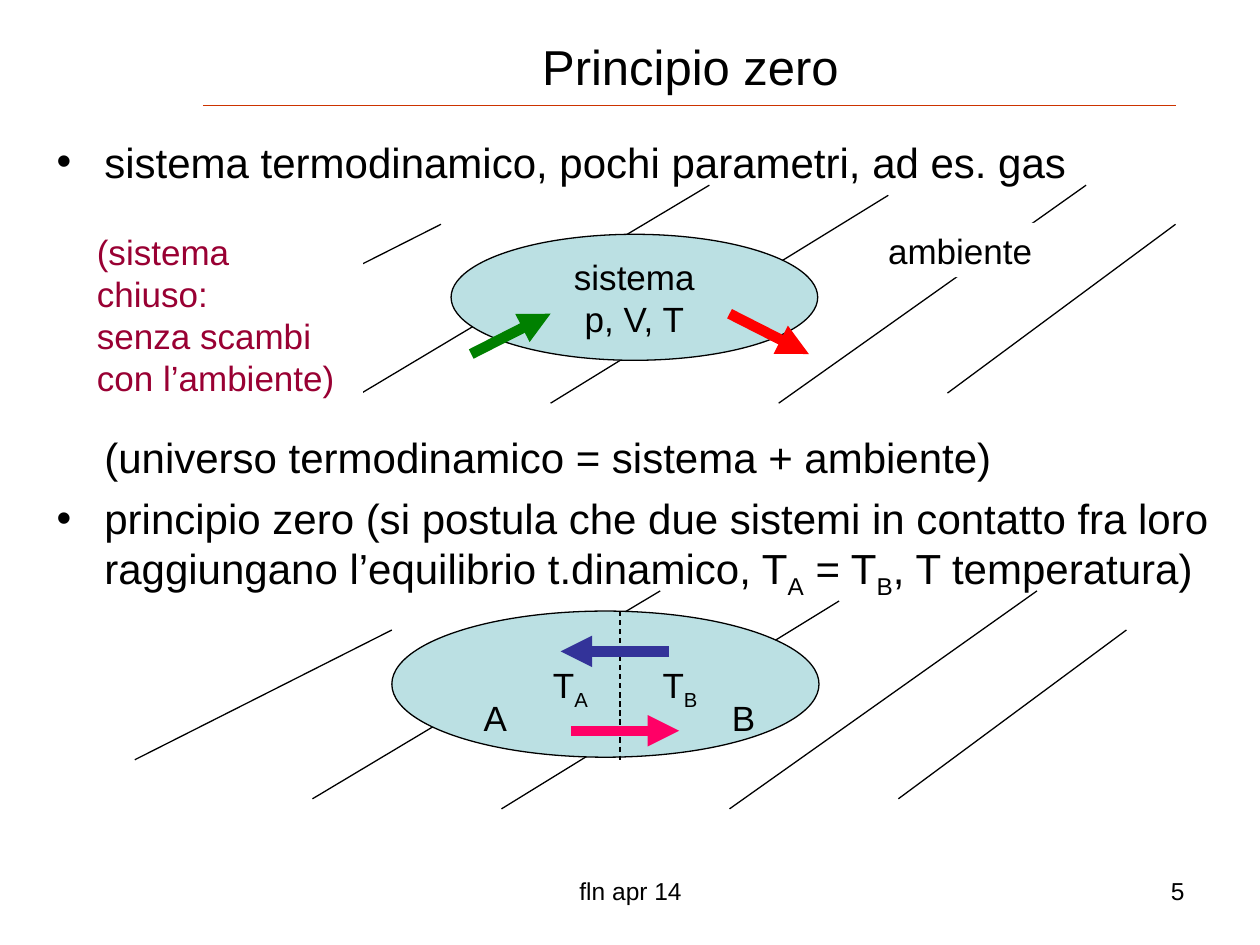
import pptx
import pptx.util
import pptx.dml.color
import pptx.enum.dml
import pptx.enum.shapes
import pptx.enum.text
import pptx.oxml.ns
import lxml.etree

Inches = pptx.util.Inches
Pt = pptx.util.Pt
RGBColor = pptx.dml.color.RGBColor
PP_ALIGN = pptx.enum.text.PP_ALIGN
MSO_ANCHOR = pptx.enum.text.MSO_ANCHOR
MSO_SHAPE = pptx.enum.shapes.MSO_SHAPE
qn = pptx.oxml.ns.qn

BLACK = RGBColor(0x00, 0x00, 0x00)
WHITE = RGBColor(0xFF, 0xFF, 0xFF)
RULE = RGBColor(0xCC, 0x33, 0x00)
POOL = RGBColor(0xBB, 0xE0, 0xE3)
GREEN = RGBColor(0x00, 0x80, 0x00)
RED = RGBColor(0xFF, 0x00, 0x00)
PINK = RGBColor(0xFF, 0x00, 0x66)
BLUE = RGBColor(0x33, 0x33, 0x99)
MAROON = RGBColor(0x99, 0x00, 0x33)

HATCH = [
    (1.46, 2.81, 3.5, 1.78),
    (2.87, 3.12, 5.63, 1.47),
    (4.37, 3.2, 7.05, 1.55),
    (6.18, 3.2, 8.62, 1.47),
    (7.52, 3.12, 9.33, 1.78),
]


class SlideBuilder:
    font = "Arial"

    def __init__(self, slide):
        self.slide = slide

    def style(self, p, size, color, align=PP_ALIGN.LEFT):
        p.alignment = align
        for r in p.runs:
            r.font.name = self.font
            r.font.size = Pt(size)
            r.font.color.rgb = color

    def label(self, sp, text, size=20, color=BLACK, align=PP_ALIGN.LEFT,
              anchor=MSO_ANCHOR.TOP, wrap=True, subscript=""):
        tf = sp.text_frame
        tf.word_wrap = wrap
        tf.vertical_anchor = anchor
        tf.text = text
        if subscript:
            self.add_subscript(tf.paragraphs[0], subscript)
        for p in tf.paragraphs:
            self.style(p, size, color, align)

    def add_subscript(self, p, text):
        r = p.add_run()
        r.text = text
        r._r.get_or_add_rPr().set("baseline", "-25000")

    def text(self, x, y, w, h, text, **options):
        sp = self.slide.shapes.add_textbox(Inches(x), Inches(y), Inches(w), Inches(h))
        self.label(sp, text, **options)

    def shape(self, kind, x, y, w, h, fill, outlined=False):
        sp = self.slide.shapes.add_shape(kind, Inches(x), Inches(y), Inches(w), Inches(h))
        sp.shadow.inherit = False
        sp.fill.solid()
        sp.fill.fore_color.rgb = fill
        if outlined:
            sp.line.color.rgb = BLACK
            sp.line.width = Pt(0.75)
        else:
            sp.line.fill.background()
        return sp

    def line(self, x1, y1, x2, y2, color=BLACK, width=0.75):
        cx = self.slide.shapes.add_connector(
            pptx.enum.shapes.MSO_CONNECTOR.STRAIGHT,
            Inches(x1), Inches(y1), Inches(x2), Inches(y2))
        cx.line.color.rgb = color
        cx.line.width = Pt(width)
        lxml.etree.SubElement(cx._element.spPr, qn("a:effectLst"))
        return cx

    def arrow(self, x1, y1, x2, y2, color):
        cx = self.line(x1, y1, x2, y2, color, 6)
        ln = cx._element.spPr.find(qn("a:ln"))
        lxml.etree.SubElement(ln, qn("a:tailEnd"), type="triangle")

    def hatch(self, dx=0, dy=0):
        for x1, y1, x2, y2 in HATCH:
            self.line(x1 + dx, y1 + dy, x2 + dx, y2 + dy)

    def body(self, x, y, w, h, paragraphs):
        sp = self.slide.shapes.add_textbox(Inches(x), Inches(y), Inches(w), Inches(h))
        tf = sp.text_frame
        tf.word_wrap = True
        tf.margin_top = Inches(0.09)
        for i, (bullet, before, parts) in enumerate(paragraphs):
            p = tf.paragraphs[0] if i == 0 else tf.add_paragraph()
            pPr = p._p.get_or_add_pPr()
            pPr.set("marL", str(Inches(0.38)))
            pPr.set("indent", str(Inches(-0.38 if bullet else 0)))
            if bullet:
                lxml.etree.SubElement(pPr, qn("a:buFont"), typeface=self.font)
                lxml.etree.SubElement(pPr, qn("a:buChar"), char="•")
            p.space_before = Pt(before)
            for j, part in enumerate(parts):
                if j % 2:
                    self.add_subscript(p, part)
                else:
                    p.add_run().text = part
            self.style(p, 24, BLACK)


def main():
    prs = pptx.Presentation()
    prs.slide_width = Inches(10)
    prs.slide_height = Inches(7.5)
    s = SlideBuilder(prs.slides.add_slide(prs.slide_layouts[6]))
    center = PP_ALIGN.CENTER
    middle = MSO_ANCHOR.MIDDLE

    s.line(1.61, 0.84, 9.33, 0.84, RULE)
    s.text(3.42, 6.9, 3.17, 0.45, "fln apr 14", size=14, align=center)
    s.text(7.17, 6.9, 2.33, 0.45, "5", size=14, align=PP_ALIGN.RIGHT)
    s.hatch()
    s.text(1.53, 0.21, 7.9, 0.63, "Principio zero", size=28, align=center, anchor=middle)
    s.body(0.35, 0.99, 9.45, 5.83, [
        (True, 0, ["sistema termodinamico, pochi parametri, ad es. gas"]),
        (False, 140, ["(universo termodinamico = sistema + ambiente)"]),
        (True, 6, ["principio zero (si postula che due sistemi in contatto fra loro "
                   "raggiungano l’equilibrio t.dinamico, T", "A", " = T", "B",
                   ", T temperatura)"]),
    ])

    system = s.shape(MSO_SHAPE.OVAL, 3.58, 1.86, 2.91, 1, POOL, outlined=True)
    s.label(system, "sistema\np, V, T", align=center, anchor=middle, wrap=False)
    environment = s.shape(MSO_SHAPE.RECTANGLE, 6.95, 1.77, 1.34, 0.43, WHITE)
    s.label(environment, "ambiente", wrap=False)
    s.arrow(3.74, 2.81, 4.37, 2.49, GREEN)
    s.arrow(5.79, 2.49, 6.42, 2.81, RED)

    s.hatch(-0.39, 3.22)
    s.shape(MSO_SHAPE.OVAL, 3.11, 4.85, 3.39, 1.16, POOL, outlined=True)
    divider = s.line(4.92, 4.85, 4.92, 6.03)
    divider.line.dash_style = pptx.enum.dml.MSO_LINE.DASH
    s.text(3.74, 5.48, 0.37, 0.43, "A", wrap=False)
    s.text(5.71, 5.48, 0.39, 0.43, "B", wrap=False)
    s.text(4.29, 5.22, 0.49, 0.43, "T", subscript="A", wrap=False)
    s.text(5.16, 5.22, 0.49, 0.43, "T", subscript="B", wrap=False)
    s.arrow(4.53, 5.8, 5.39, 5.8, PINK)
    s.arrow(5.31, 5.17, 4.45, 5.17, BLUE)

    closed = s.shape(MSO_SHAPE.RECTANGLE, 0.67, 1.78, 2.21, 1.43, WHITE)
    s.label(closed, "(sistema\vchiuso:\nsenza scambi\ncon l’ambiente)",
            color=MAROON, wrap=False)

    prs.save("out.pptx")


if __name__ == "__main__":
    main()
